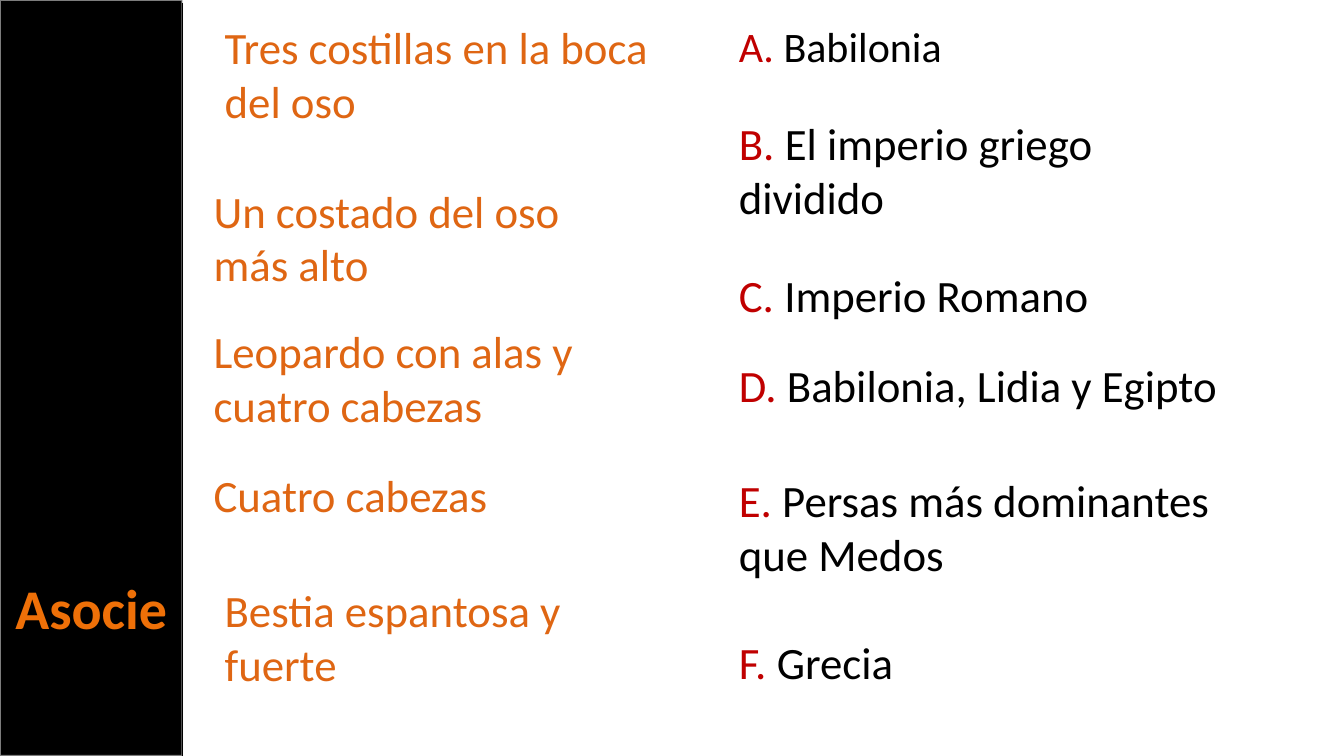
from lxml.etree import SubElement
from pptx import Presentation
from pptx.dml.color import RGBColor
from pptx.enum.shapes import MSO_CONNECTOR, MSO_SHAPE
from pptx.enum.text import MSO_AUTO_SIZE, PP_ALIGN
from pptx.oxml.ns import qn
from pptx.util import Emu, Pt

PX = 9144  # 100 px to the inch
ORANGE, RED, BLACK = "DF6613", "C00000", "000000"
BAND_WIDTH, SLIDE_HEIGHT = 181, 750


def rgb(color):
    return RGBColor.from_string(color)


def add_text(left, top, width, height, runs, size=32):
    box = slide.shapes.add_textbox(*[Emu(n * PX) for n in (left, top, width, height)])
    frame = box.text_frame
    frame.word_wrap = True
    frame.auto_size = MSO_AUTO_SIZE.SHAPE_TO_FIT_TEXT
    paragraph = frame.paragraphs[0]
    paragraph.font.name = "Calibri"
    paragraph.font.size = Pt(size)
    for text, color in runs:
        run = paragraph.add_run()
        run.text = text
        run.font.color.rgb = rgb(color)
    return paragraph


presentation = Presentation()
presentation.slide_width = Emu(1333 * PX)
presentation.slide_height = Emu(SLIDE_HEIGHT * PX)
slide = presentation.slides.add_slide(presentation.slide_layouts[6])

# Black side band with a half-transparent outline
band = slide.shapes.add_shape(
    MSO_SHAPE.RECTANGLE, 0, 0, Emu(BAND_WIDTH * PX), Emu(SLIDE_HEIGHT * PX))
band.shadow.inherit = False
band.fill.solid()
band.fill.fore_color.rgb = rgb(BLACK)
band.line.color.rgb = rgb("F9F9F9")
band.line.width = Pt(1.35)
outline_color = next(band.line._ln.iter(qn("a:srgbClr")))
SubElement(outline_color, qn("a:alpha"), val="50000")

# Symbols to match: left, top, width, height, text
symbols = [
    (213, 15, 459, 118, "Tres costillas en la boca del oso"),
    (202, 177, 384, 118, "Un costado del oso más alto"),
    (202, 316, 413, 118, "Leopardo con alas y cuatro cabezas"),
    (202, 459, 406, 64, "Cuatro cabezas"),
    (213, 573, 426, 118, "Bestia espantosa y fuerte"),
]
for left, top, width, height, text in symbols:
    add_text(left, top, width, height, [(text, ORANGE)])

# Lettered answers: top, width, height, text, size
answers = [
    (15, 418, 61, "Babilonia", 30),
    (110, 492, 118, "El imperio griego dividido", 32),
    (261, 470, 64, "Imperio Romano", 32),
    (350, 551, 64, "Babilonia, Lidia y Egipto", 32),
    (464, 517, 118, "Persas más dominantes que Medos", 32),
    (625, 559, 64, "Grecia", 32),
]
for letter, (top, width, height, text, size) in zip("ABCDEF", answers):
    add_text(723, top, width, height, [(f"{letter}. ", RED), (text, BLACK)], size)

# Title on the band
title = add_text(0, 564, BAND_WIDTH, 77, [("Asocie", "EE7008")], 40)
title.font.bold = True
title.alignment = PP_ALIGN.CENTER

# Thin line along the band's edge
edge = slide.shapes.add_connector(
    MSO_CONNECTOR.STRAIGHT, Emu(BAND_WIDTH * PX), Emu(3 * PX),
    Emu(BAND_WIDTH * PX), Emu(SLIDE_HEIGHT * PX))
edge.line.color.rgb = rgb(BLACK)
edge.line.width = Pt(0.85)
SubElement(edge._element.spPr, qn("a:effectLst"))

presentation.save("out.pptx")
